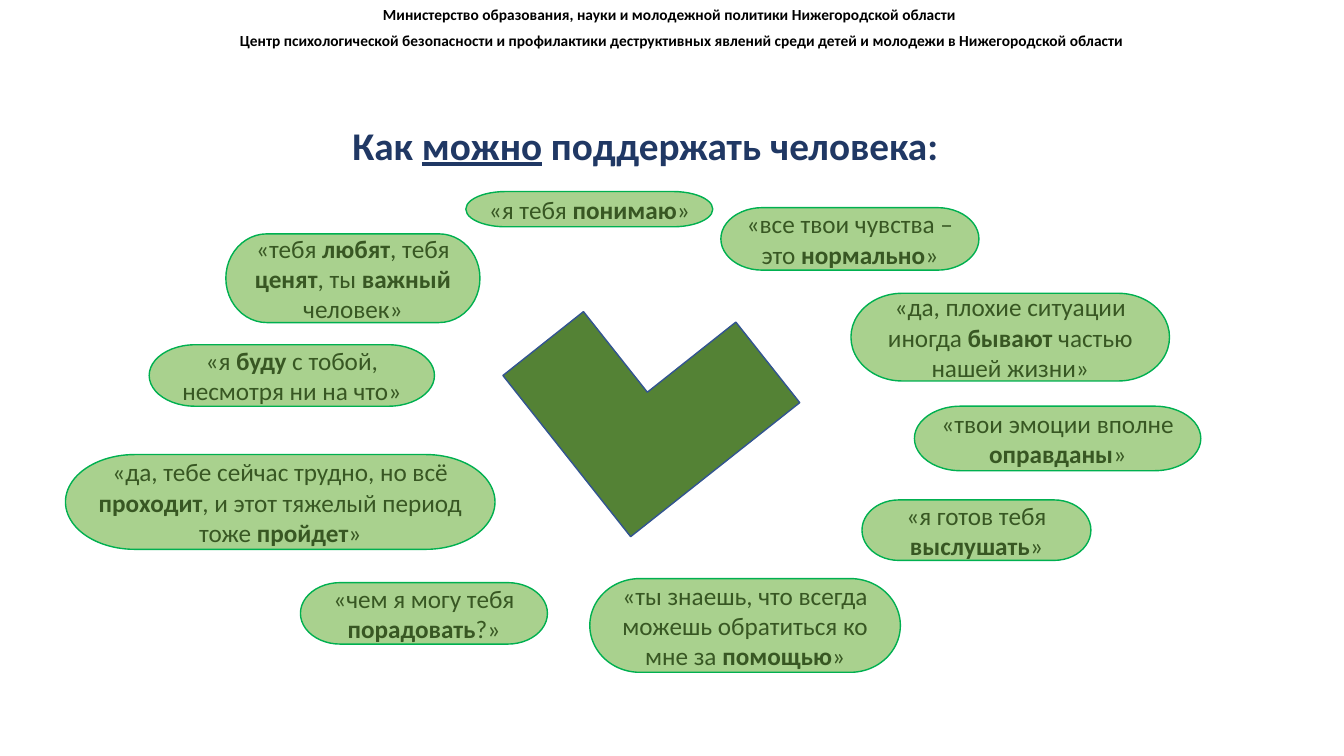
from pptx import Presentation
from pptx.dml.color import RGBColor
from pptx.enum.shapes import MSO_SHAPE
from pptx.enum.text import MSO_ANCHOR, MSO_AUTO_SIZE, PP_ALIGN
from pptx.util import Inches, Pt

BLACK = RGBColor(0x00, 0x00, 0x00)
NAVY = RGBColor(0x20, 0x38, 0x64)
DARK_GREEN = RGBColor(0x38, 0x57, 0x23)
CHECK_GREEN = RGBColor(0x54, 0x82, 0x35)
LIGHT_GREEN = RGBColor(0xA9, 0xD1, 0x8E)
BORDER_GREEN = RGBColor(0x00, 0xB0, 0x50)
BORDER_BLUE = RGBColor(0x32, 0x54, 0x91)

HEADERS = [
    ((3.7, 0, 8.32, 0.29),
     "Министерство образования, науки и молодежной политики Нижегородской области"),
    ((2.28, 0.26, 9.78, 0.29),
     "Центр психологической безопасности и профилактики деструктивных явлений "
     "среди детей и молодежи в Нижегородской области"),
]

PHRASES = [
    ((2.24, 2.32, 2.52, 0.88), "«тебя *любят*, тебя *ценят*, ты *важный* человек»"),
    ((1.48, 3.42, 2.83, 0.61), "«я *буду* с тобой, несмотря ни на что»"),
    ((2.98, 5.78, 2.45, 0.61), "«чем я могу тебя *порадовать*?»"),
    ((8.55, 4.96, 2.27, 0.6), "«я готов тебя *выслушать*»"),
    ((5.85, 5.74, 3.08, 0.93),
     "«ты знаешь, что всегда можешь обратиться ко мне за *помощью*»"),
    ((9.07, 4.03, 2.84, 0.64), "«твои эмоции вполне *оправданы*»"),
    ((8.44, 2.91, 3.16, 0.87), "«да, плохие ситуации иногда *бывают* частью нашей жизни»"),
    ((4.62, 1.9, 2.45, 0.35), "«я тебя *понимаю*»"),
    ((7.15, 2.06, 2.56, 0.62), "«все твои чувства – это *нормально*»"),
    ((0.65, 4.51, 4.26, 0.94),
     "«да, тебе сейчас трудно, но всё *проходит*, и этот тяжелый период тоже *пройдет*»"),
]


def write(tf, text, size, color, bold=False, emphasis="bold",
          align=PP_ALIGN.LEFT, anchor=MSO_ANCHOR.TOP, wrap=True,
          auto_size=MSO_AUTO_SIZE.NONE, font="Calibri"):
    """Fill a text frame; parts between asterisks get the emphasis attribute."""
    tf.word_wrap = wrap
    tf.auto_size = auto_size
    tf.vertical_anchor = anchor
    p = tf.paragraphs[0]
    p.alignment = align
    for i, part in enumerate(text.split("*")):
        r = p.add_run()
        r.text = part
        r.font.name = font
        r.font.size = Pt(size)
        r.font.bold = bold
        r.font.color.rgb = color
        if i % 2:
            setattr(r.font, emphasis, True)


class SupportSlide:
    def __init__(self, prs):
        self.slide = prs.slides.add_slide(prs.slide_layouts[5])

    def title(self, box, text):
        sp = self.slide.shapes.title
        sp.left, sp.top, sp.width, sp.height = map(Inches, box)
        write(sp.text_frame, text, 28, NAVY, bold=True, emphasis="underline",
              align=PP_ALIGN.CENTER, wrap=False)

    def header(self, box, text):
        sp = self.slide.shapes.add_textbox(*map(Inches, box))
        write(sp.text_frame, text, 11, BLACK, bold=True,
              auto_size=MSO_AUTO_SIZE.SHAPE_TO_FIT_TEXT)

    def shape(self, kind, box, fill, line):
        sp = self.slide.shapes.add_shape(kind, *map(Inches, box))
        sp.shadow.inherit = False
        sp.fill.solid()
        sp.fill.fore_color.rgb = fill
        sp.line.color.rgb = line
        sp.line.width = Pt(1)
        return sp

    def phrase(self, box, text):
        sp = self.shape(MSO_SHAPE.FLOWCHART_TERMINATOR, box, LIGHT_GREEN, BORDER_GREEN)
        write(sp.text_frame, text, 18, DARK_GREEN,
              align=PP_ALIGN.CENTER, anchor=MSO_ANCHOR.MIDDLE)

    def check_mark(self, box):
        sp = self.shape(MSO_SHAPE.CORNER, box, CHECK_GREEN, BORDER_BLUE)
        sp.rotation = 321.6


def main():
    prs = Presentation()
    prs.slide_width, prs.slide_height = Inches(13.33), Inches(7.5)
    s = SupportSlide(prs)
    s.title((3.37, 1.15, 6.06, 0.57), "Как *можно* поддержать человека:")
    for box, text in HEADERS:
        s.header(box, text)
    for box, text in PHRASES:
        s.phrase(box, text)
    s.check_mark((5.39, 2.84, 2.14, 2.04))
    prs.save("out.pptx")


if __name__ == "__main__":
    main()
